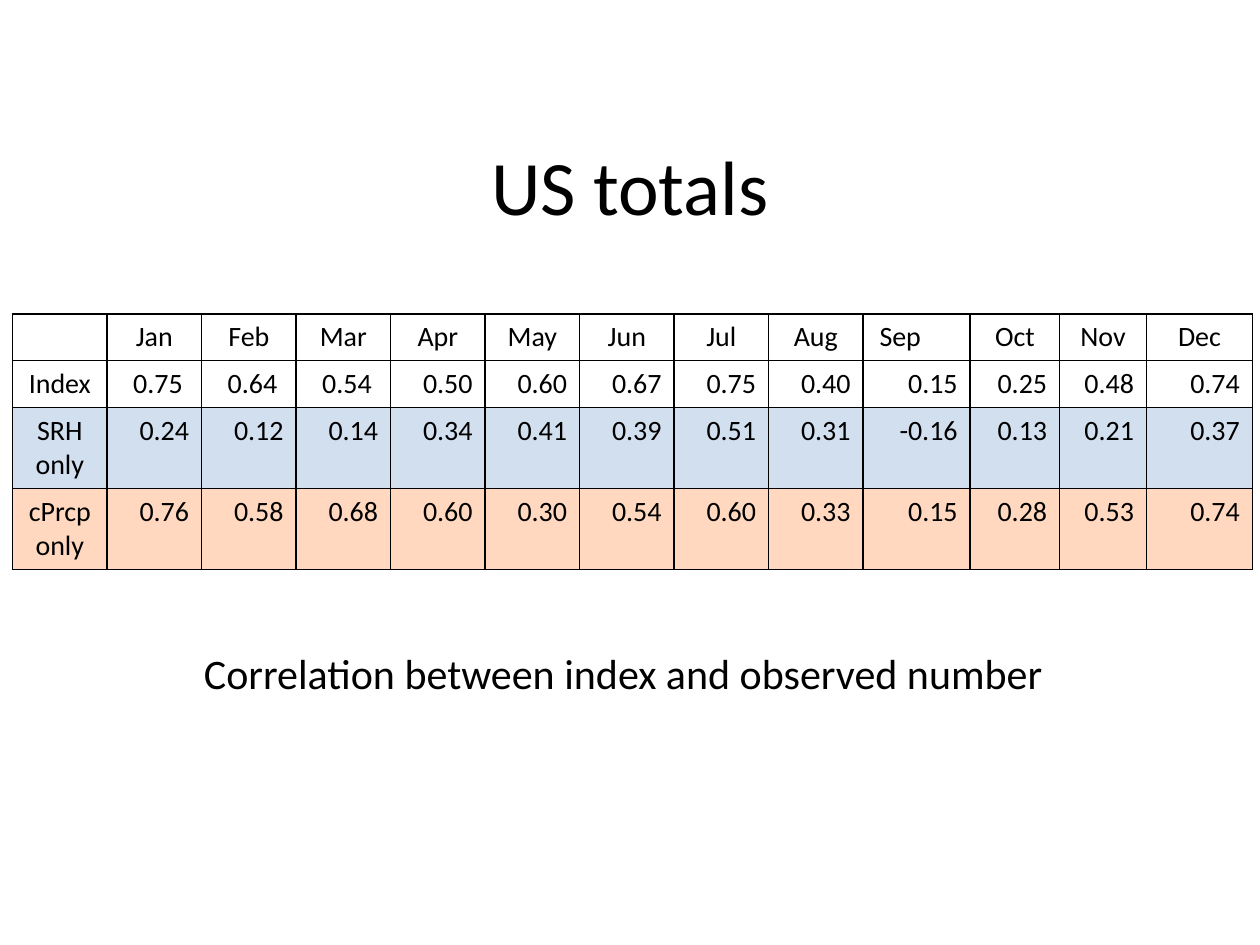
from lxml.etree import SubElement
from pptx import Presentation
from pptx.dml.color import RGBColor
from pptx.enum.text import MSO_ANCHOR, MSO_AUTO_SIZE, PP_ALIGN as AL
from pptx.oxml.ns import qn
from pptx.util import Inches, Pt

BLACK = RGBColor(0x00, 0x00, 0x00)
BLUE = RGBColor(0x4F, 0x81, 0xBD)
ORANGE = RGBColor(0xFF, 0x66, 0x00)
FONT = "Calibri"
TINT = 25  # opacity of a row fill, percent

COL_WIDTHS = [0.75] * 9 + [0.85, 0.71, 0.69, 0.84]
ROW_HEIGHTS = [0.37, 0.37, 0.64, 0.64]
ROW_FILLS = [None, None, BLUE, ORANGE]
ROWS = [
    ["", *"Jan Feb Mar Apr May Jun Jul Aug Sep Oct Nov Dec".split()],
    ["Index", *"0.75 0.64 0.54 0.50 0.60 0.67 0.75 0.40 0.15 0.25 0.48 0.74".split()],
    ["SRH only", *"0.24 0.12 0.14 0.34 0.41 0.39 0.51 0.31 -0.16 0.13 0.21 0.37".split()],
    ["cPrcp\vonly", *"0.76 0.58 0.68 0.60 0.30 0.54 0.60 0.33 0.15 0.28 0.53 0.74".split()],
]
# Cells whose text stands further from the right edge: (row, column) -> inches
RIGHT_MARGINS = {(0, 9): 0.36, (1, 1): 0.15, (1, 2): 0.15, (1, 3): 0.15}


def write(tf, text, size, align):
    tf.text = text
    p = tf.paragraphs[0]
    p.alignment = align
    for r in p.runs:
        for name, value in {"name": FONT, "size": Pt(size)}.items():
            setattr(r.font, name, value)
        r.font.color.rgb = BLACK
    if not text:
        SubElement(p._p, qn("a:endParaRPr"), sz=str(size * 100))


def add_borders(cell):
    tcPr = cell._tc.get_or_add_tcPr()
    for side in ("lnL", "lnR", "lnT", "lnB"):
        ln = SubElement(tcPr, qn(f"a:{side}"), w=str(Pt(1)))
        fill = SubElement(ln, qn("a:solidFill"))
        SubElement(fill, qn("a:srgbClr"), val=str(BLACK))


def fill_cell(cell, color):
    if color is None:
        cell.fill.background()
        return
    cell.fill.solid()
    cell.fill.fore_color.rgb = color
    clr = cell._tc.tcPr.find(f"{qn('a:solidFill')}/{qn('a:srgbClr')}")
    SubElement(clr, qn("a:alpha"), val=str(TINT * 1000))


def add_title(slide, text):
    sp = slide.shapes.title
    box = {"left": 0.5, "top": 0.84, "width": 9, "height": 1.25}
    for name, value in box.items():
        setattr(sp, name, Inches(value))
    sp.text_frame.vertical_anchor = MSO_ANCHOR.MIDDLE
    write(sp.text_frame, text, 44, AL.CENTER)


def add_month_table(slide):
    table = slide.shapes.add_table(
        len(ROWS), len(COL_WIDTHS), Inches(0.1), Inches(2.49),
        Inches(sum(COL_WIDTHS)), Inches(sum(ROW_HEIGHTS))).table
    table.first_row = table.horz_banding = False
    for col, width in zip(table.columns, COL_WIDTHS):
        col.width = Inches(width)
    for i, (values, height, color) in enumerate(zip(ROWS, ROW_HEIGHTS, ROW_FILLS)):
        table.rows[i].height = Inches(height)
        for j, value in enumerate(values):
            cell = table.cell(i, j)
            write(cell.text_frame, value, 16, AL.RIGHT if i and j else AL.CENTER)
            cell.margin_right = Inches(RIGHT_MARGINS.get((i, j), 0.1))
            add_borders(cell)
            fill_cell(cell, color)


def add_caption(slide, text):
    tf = slide.shapes.add_textbox(
        Inches(1.52), Inches(5.09), Inches(6.94), Inches(0.5)).text_frame
    tf.word_wrap = False
    tf.auto_size = MSO_AUTO_SIZE.SHAPE_TO_FIT_TEXT
    write(tf, text, 24, AL.LEFT)


def main():
    prs = Presentation()
    prs.slide_width, prs.slide_height = Inches(10), Inches(7.5)
    slide = prs.slides.add_slide(prs.slide_layouts[5])
    add_title(slide, "US totals")
    add_month_table(slide)
    add_caption(slide, "Correlation between index and observed number")
    prs.save("out.pptx")


if __name__ == "__main__":
    main()
